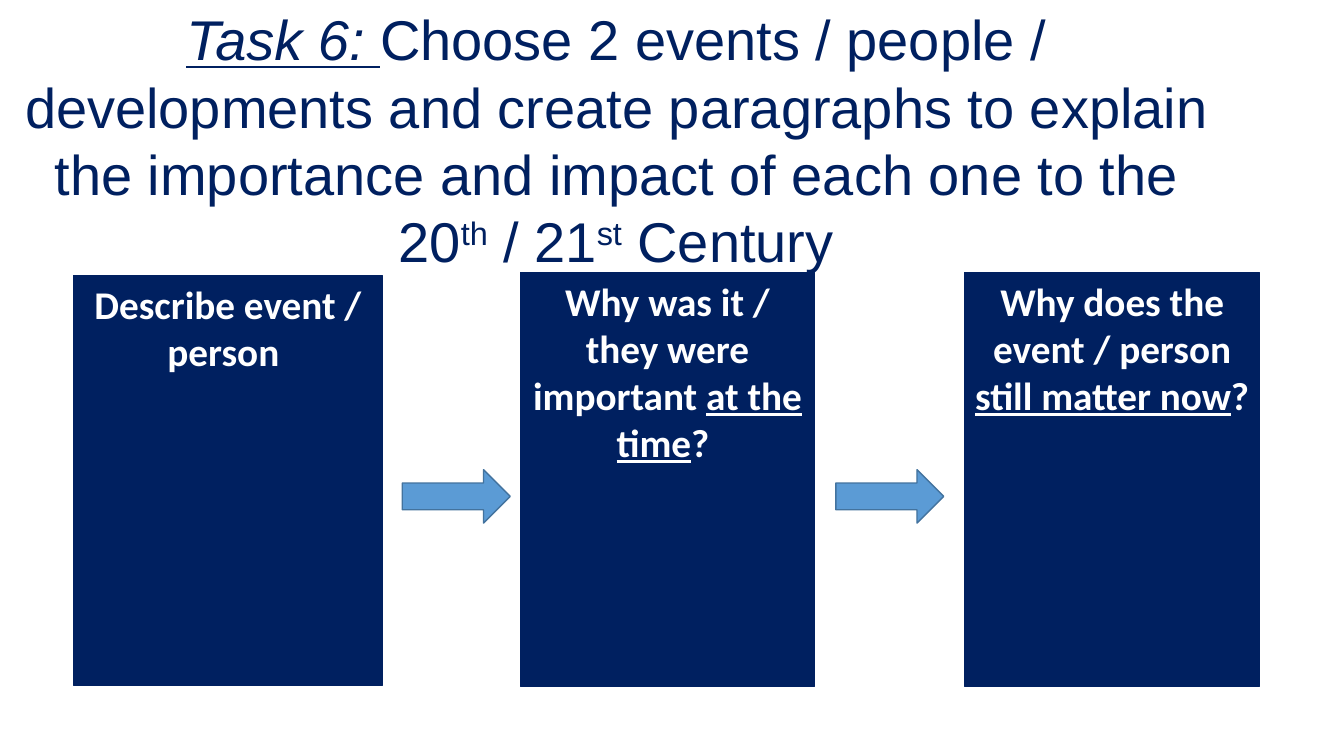
import pptx
import pptx.util
import pptx.dml.color
import pptx.enum.shapes
import pptx.enum.text

Inches, Pt = pptx.util.Inches, pptx.util.Pt
Shape = pptx.enum.shapes.MSO_SHAPE
NAVY, WHITE, BLUE, EDGE = "002060", "FFFFFF", "5B9BD5", "43739E"

# Content: each run is (text, style), style being "", "u", "iu" or "sup"
TITLE = [
    ("Task 6: ", "iu"),
    ("Choose 2 events / people / developments and create paragraphs "
     "to explain the importance and impact of each one to the 20", ""),
    ("th", "sup"), (" / 21", ""), ("st", "sup"), (" Century", ""),
]
# Panels: left, top, width, height, runs
PANELS = [
    (0.73, 2.73, 3.06, 4.07, [("Describe event / person ", "")]),
    (5.16, 2.7, 2.92, 4.11, [("Why was it / they were important ", ""),
                             ("at the time", "u"), ("? ", "")]),
    (9.57, 2.7, 2.92, 4.11, [("Why does the event / person ", ""),
                             ("still matter now", "u"), ("?", "")]),
]
ARROWS = [3.99, 8.29]


def color(code):
    return pptx.dml.color.RGBColor.from_string(code)


def write(shape, runs, font, size, code, bold=False):
    frame = shape.text_frame
    frame.word_wrap = True
    frame.vertical_anchor = pptx.enum.text.MSO_ANCHOR.TOP
    para = frame.paragraphs[0]
    para.alignment = pptx.enum.text.PP_ALIGN.CENTER
    for text, style in runs:
        run = para.add_run()
        run.text = text
        face = run.font
        face.name, face.size, face.bold = font, Pt(size), bold
        face.color.rgb = color(code)
        if style == "sup":
            run._r.get_or_add_rPr().set("baseline", "30000")
        else:
            face.italic = "i" in style
            face.underline = "u" in style


def draw(kind, box, fill, line, width):
    shape = slide.shapes.add_shape(kind, *map(Inches, box))
    shape.shadow.inherit = False
    shape.fill.solid()
    shape.fill.fore_color.rgb = color(fill)
    shape.line.color.rgb = color(line)
    shape.line.width = Pt(width)
    return shape


deck = pptx.Presentation()
deck.slide_width, deck.slide_height = Inches(13.33), Inches(7.5)
slide = deck.slides.add_slide(deck.slide_layouts[6])

# Title
head = slide.shapes.add_textbox(0, 0, Inches(12.22), Inches(2.79))
write(head, TITLE, "Arial", 40, NAVY)

# Panels
for *box, runs in PANELS:
    panel = draw(Shape.RECTANGLE, box, NAVY, NAVY, 0.75)
    write(panel, runs, "Calibri", 28, WHITE, bold=True)

# Arrows between panels
for left in ARROWS:
    draw(Shape.RIGHT_ARROW, (left, 4.66, 1.07, 0.53), BLUE, EDGE, 1)

deck.save("out.pptx")
